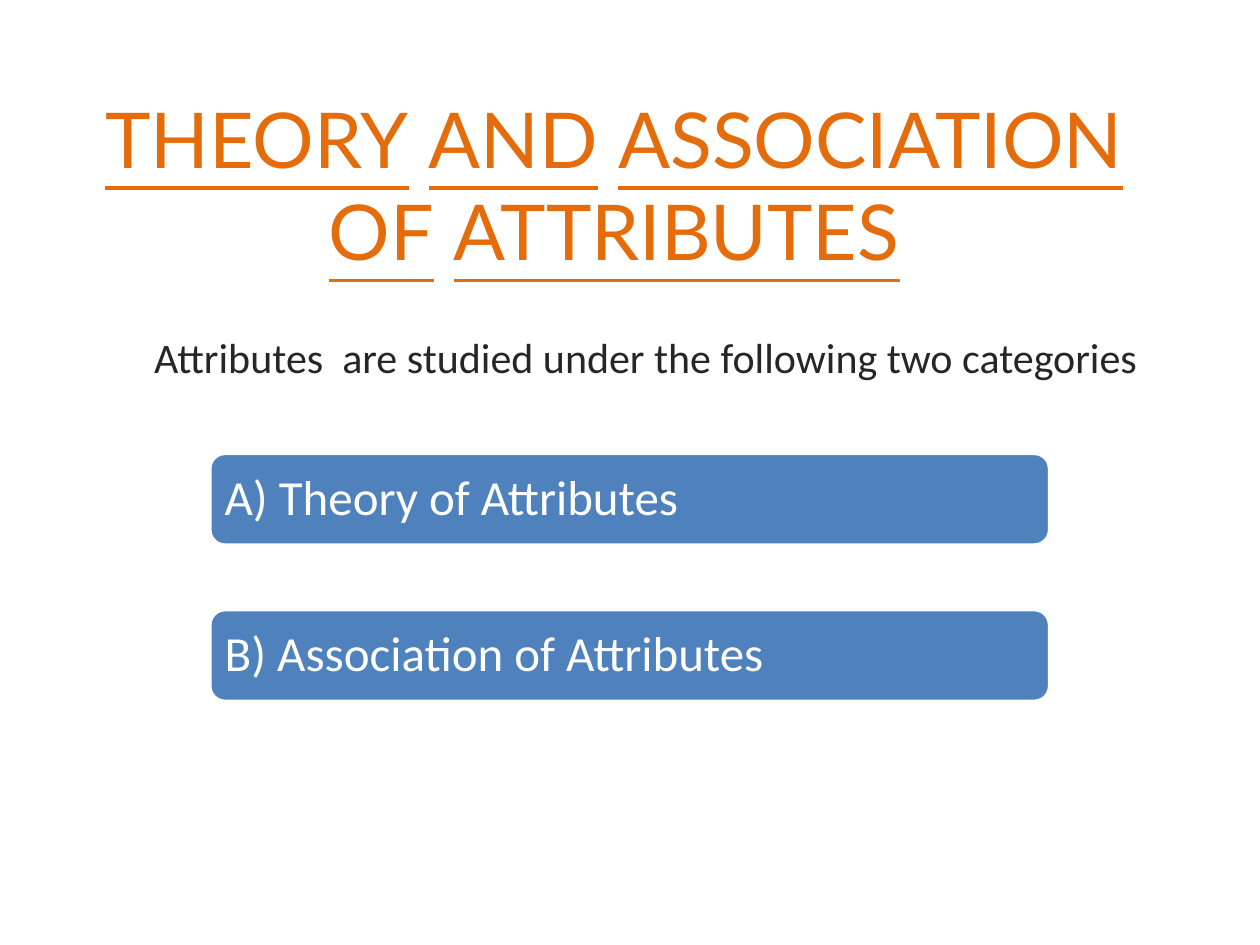
from dataclasses import dataclass

from pptx import Presentation
from pptx.dml.color import RGBColor
from pptx.enum.shapes import MSO_SHAPE
from pptx.enum.text import MSO_ANCHOR, PP_ALIGN
from pptx.util import Cm, Pt

ROUNDED = MSO_SHAPE.ROUNDED_RECTANGLE
LEFT, CENTER = PP_ALIGN.LEFT, PP_ALIGN.CENTER
TOP, MIDDLE = MSO_ANCHOR.TOP, MSO_ANCHOR.MIDDLE
COLORS = {"title": "E46C0A", "body": "262626", "bar": "4F81BD", "white": "FFFFFF"}


@dataclass
class Box:
    """A place on the slide, in centimetres."""
    left: float
    top: float
    width: float
    height: float

    def lengths(self) -> tuple:
        return Cm(self.left), Cm(self.top), Cm(self.width), Cm(self.height)


def write_text(shape, text: str, *, size: float, color: str, font: str = "Calibri",
               align=LEFT, anchor=TOP, underline_words: bool = False,
               line_spacing: float = 1.0) -> None:
    """Fill a shape with one paragraph; a newline in the text is a line break."""
    frame = shape.text_frame
    frame.word_wrap = True
    frame.vertical_anchor = anchor
    paragraph = frame.paragraphs[0]
    paragraph.alignment = align
    paragraph.line_spacing = line_spacing
    for line_number, line in enumerate(text.split("\n")):
        if line_number:
            paragraph.add_line_break()
        # Underlining by word leaves the spaces between words bare
        pieces = line.replace(" ", "| |").split("|") if underline_words else [line]
        for piece in pieces:
            run = paragraph.add_run()
            run.text = piece
            run.font.name = font
            run.font.size = Pt(size)
            run.font.color.rgb = RGBColor.from_string(COLORS[color])
            run.font.underline = underline_words and piece != " "


def add_text(slide, box: Box, text: str, **text_format) -> None:
    write_text(slide.shapes.add_textbox(*box.lengths()), text, **text_format)


def add_bar(slide, box: Box, text: str) -> None:
    shape = slide.shapes.add_shape(ROUNDED, *box.lengths())
    shape.shadow.inherit = False
    shape.fill.solid()
    shape.fill.fore_color.rgb = RGBColor.from_string(COLORS["bar"])
    shape.line.color.rgb = RGBColor.from_string(COLORS["white"])
    shape.line.width = Pt(2)
    shape.text_frame.margin_left = shape.text_frame.margin_right = Cm(0.21)
    write_text(shape, text, size=28, color="white", anchor=MIDDLE, line_spacing=0.9)


def main() -> None:
    presentation = Presentation()
    presentation.slide_width, presentation.slide_height = Cm(25.4), Cm(19.05)
    slide = presentation.slides.add_slide(presentation.slide_layouts[6])

    # Title and introduction
    add_text(slide, Box(1.27, 1.48, 22.23, 4.45),
             "THEORY AND ASSOCIATION\nOF ATTRIBUTES", size=44, color="title",
             font="Lato", align=CENTER, anchor=MIDDLE, underline_words=True)
    add_text(slide, Box(2.54, 6.56, 20.96, 9.1),
             "Attributes  are studied under the following two categories",
             size=24, color="body", align=CENTER)

    # Category bars
    categories = ["A) Theory of Attributes", "B) Association of Attributes"]
    for index, category in enumerate(categories):
        add_bar(slide, Box(4.23, 9.14 + index * 3.15, 16.93, 1.85), category)

    presentation.save("out.pptx")


if __name__ == "__main__":
    main()
